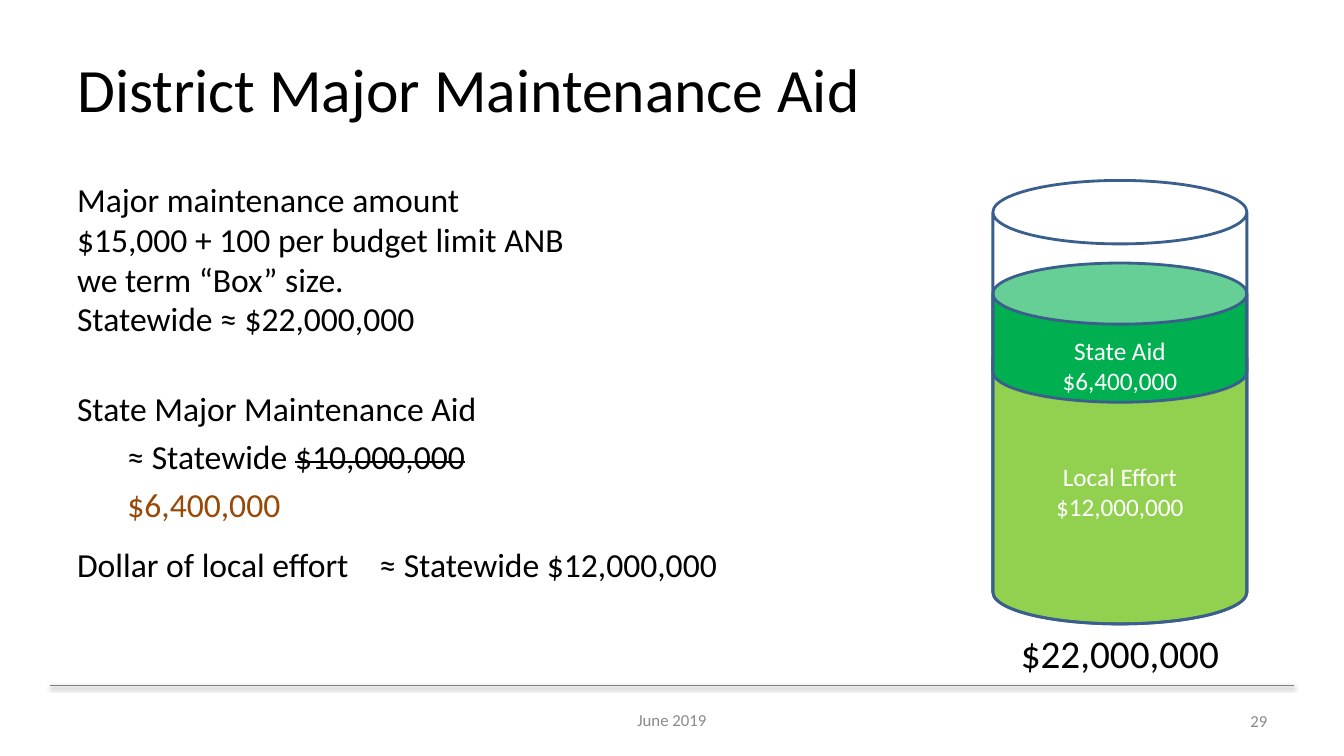
from lxml.etree import SubElement
from pptx import Presentation
from pptx.dml.color import RGBColor
from pptx.enum.shapes import MSO_CONNECTOR, MSO_SHAPE
from pptx.enum.text import MSO_ANCHOR, PP_ALIGN
from pptx.oxml import parse_xml
from pptx.oxml.ns import nsdecls, qn
from pptx.util import Pt

FONT = "Calibri"
COLORS = {
    "text": "000000",
    "light": "FFFFFF",
    "footer": "898989",
    "revised": "984807",
    "outline": "3A5F8C",
    "local": "92D050",
    "state": "00B050",
    "rule": "7F7F7F",
}
CAN_LEFT, CAN_WIDTH = 709.2, 181.44


def color(name):
    return RGBColor.from_string(COLORS[name])


def format_run(run, size, color_name):
    run.font.name = FONT
    run.font.size = Pt(size)
    run.font.color.rgb = color(color_name)


def format_text(shape, size, color_name, align, anchor):
    text_frame = shape.text_frame
    text_frame.word_wrap = True
    text_frame.vertical_anchor = anchor
    for paragraph in text_frame.paragraphs:
        paragraph.alignment = align
        for run in paragraph.runs:
            format_run(run, size, color_name)


def add_title(slide, text):
    title = slide.shapes.title
    title.left, title.top, title.width, title.height = Pt(48), Pt(21.6), Pt(864), Pt(82.8)
    title.text_frame.text = text
    format_text(title, 44, "text", PP_ALIGN.LEFT, MSO_ANCHOR.MIDDLE)


def add_label(slide, text, box, size, color_name, align, anchor=MSO_ANCHOR.MIDDLE):
    label = slide.shapes.add_textbox(*map(Pt, box))
    label.text_frame.text = text
    format_text(label, size, color_name, align, anchor)


def add_can(slide, top, height, fill=None, text="", adjustment=0.25):
    can = slide.shapes.add_shape(
        MSO_SHAPE.CAN, Pt(CAN_LEFT), Pt(top), Pt(CAN_WIDTH), Pt(height))
    can.adjustments[0] = adjustment
    can.shadow.inherit = False
    can.line.color.rgb = color("outline")
    can.line.width = Pt(2)
    if fill:
        can.fill.solid()
        can.fill.fore_color.rgb = color(fill)
    else:
        can.fill.background()
    if text:
        can.text_frame.text = text
        format_text(can, 18, "light", PP_ALIGN.CENTER, MSO_ANCHOR.MIDDLE)
    return can


def add_tab_stop(paragraph, position):
    tabs = SubElement(paragraph._p.get_or_add_pPr(), qn("a:tabLst"))
    SubElement(tabs, qn("a:tab"), pos=str(Pt(position)), algn="l")


def add_explanation(slide):
    lines = [
        ("Major maintenance amount\v$15,000 + 100 per budget limit ANB\v"
         "we term “Box” size.\vStatewide ≈ $22,000,000", 36, None),
        ("State Major Maintenance Aid", 6, None),
        ("\t≈ Statewide ", 6, 36),
        ("\t$6,400,000", 13, 36),
        ("Dollar of local effort \t≈ Statewide $12,000,000", 6, 216),
    ]
    explanation = slide.shapes.add_textbox(Pt(48), Pt(126), Pt(593.28), Pt(356.4))
    text_frame = explanation.text_frame
    text_frame.text = "\n".join(text for text, _, _ in lines)
    paragraphs = text_frame.paragraphs
    for paragraph, (_, space_after, tab) in zip(paragraphs, lines):
        if tab:
            add_tab_stop(paragraph, tab)
        paragraph.space_after = Pt(space_after)
        paragraph.line_spacing = 0.98
    paragraphs[4].space_before = Pt(2)
    struck = paragraphs[2].add_run()
    struck.text = "$10,000,000"
    format_text(explanation, 24, "text", PP_ALIGN.LEFT, MSO_ANCHOR.TOP)
    struck.font._element.set("strike", "sngStrike")
    for run in paragraphs[3].runs:
        run.font.color.rgb = color("revised")


def add_footer_rule(slide):
    rule = slide.shapes.add_connector(
        MSO_CONNECTOR.STRAIGHT, Pt(36), Pt(489.6), Pt(924), Pt(489.6))
    rule.line.color.rgb = color("rule")
    rule.line.width = Pt(1)
    rule._element.spPr.append(parse_xml(
        f'<a:effectLst {nsdecls("a")}>'
        f'<a:outerShdw blurRad="{Pt(3.1)}" dist="{Pt(1.6)}" dir="5400000" rotWithShape="0">'
        f'<a:srgbClr val="{COLORS["text"]}"><a:alpha val="38000"/></a:srgbClr>'
        '</a:outerShdw></a:effectLst>'))


def main():
    presentation = Presentation()
    presentation.slide_width, presentation.slide_height = Pt(960), Pt(540)
    slide = presentation.slides.add_slide(presentation.slide_layouts[5])
    add_footer_rule(slide)
    add_title(slide, "District Major Maintenance Aid")
    add_label(slide, "$22,000,000", (CAN_LEFT, 445.7, CAN_WIDTH, 41),
              28, "text", PP_ALIGN.CENTER, MSO_ANCHOR.TOP)
    add_label(slide, "June 2019", (368, 499.7, 224, 28.8), 12, "footer", PP_ALIGN.CENTER)
    add_label(slide, "29", (688.3, 500.4, 224, 28.8), 12, "footer", PP_ALIGN.RIGHT)
    add_explanation(slide)
    add_can(slide, 233.3, 212.4, "local", "Local Effort\n$12,000,000")
    state_can = add_can(slide, 187.9, 99.4, "state", "State Aid\n$6,400,000", 0.439)
    state_can.text_frame.vertical_anchor = MSO_ANCHOR.TOP
    state_can.text_frame.margin_top = Pt(8)
    add_can(slide, 128.9, 316.8)
    presentation.save("out.pptx")


if __name__ == "__main__":
    main()
